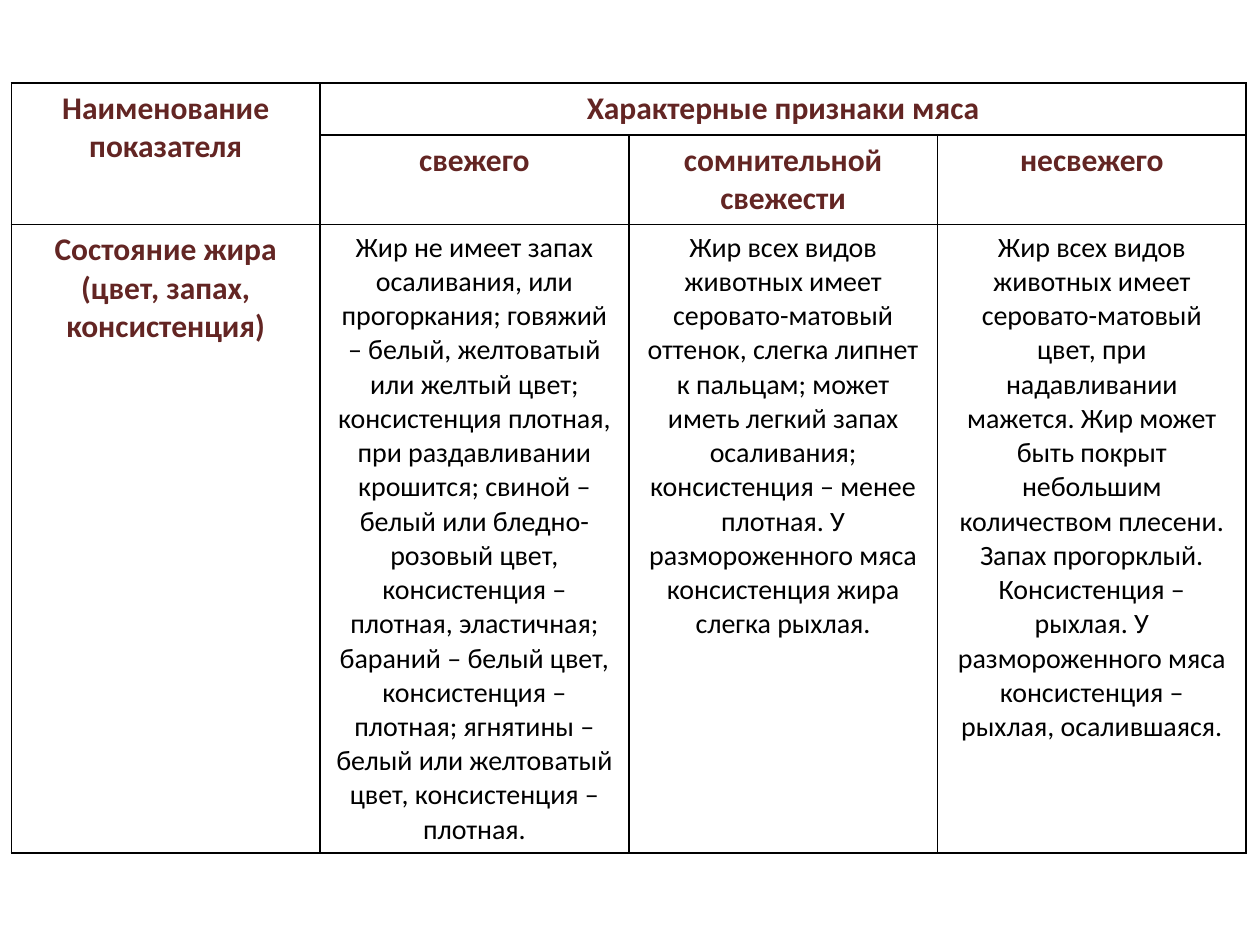
"""Builds a slide with a table comparing the fat of fresh, doubtful and spoiled meat."""
import pptx
import pptx.dml.color
import pptx.enum.text
import pptx.oxml
import pptx.oxml.ns
import pptx.util
from pptx.util import Inches

MAROON = pptx.dml.color.RGBColor(0x63, 0x25, 0x23)
BLACK = pptx.dml.color.RGBColor(0, 0, 0)
WHITE = pptx.dml.color.RGBColor(0xFF, 0xFF, 0xFF)

ROW_HEIGHTS = [0.41, 0.71, 4.99]
COLUMN_WIDTHS = [2.45] * 4
MERGES = [((0, 0), (1, 0)), ((0, 1), (0, 3))]
MEAT_SIGNS = [
    ["Наименование показателя", "Характерные признаки мяса", "", ""],
    ["", "свежего", "сомнительной свежести", "несвежего"],
    [
        "Состояние жира (цвет, запах, консистенция)",
        "Жир не имеет запах осаливания, или прогоркания; говяжий – белый, "
        "желтоватый или желтый цвет; консистенция плотная, при раздавливании "
        "крошится; свиной – белый или бледно-розовый цвет, консистенция – "
        "плотная, эластичная; бараний – белый цвет, консистенция – плотная; "
        "ягнятины – белый или желтоватый цвет, консистенция – плотная.",
        "Жир всех видов животных имеет серовато-матовый оттенок, слегка липнет "
        "к пальцам; может иметь легкий запах осаливания; консистенция – менее "
        "плотная. У размороженного мяса консистенция жира слегка рыхлая.",
        "Жир всех видов животных имеет серовато-матовый цвет, при надавливании "
        "мажется. Жир может быть покрыт небольшим количеством плесени. Запах "
        "прогорклый. Консистенция – рыхлая. У размороженного мяса "
        "консистенция – рыхлая, осалившаяся.",
    ],
]


class SlideBuilder:
    """Holds the text style and the current slide."""

    font_name = "Calibri"
    heading_size = 18
    body_size = 16
    border_width = 1

    def __init__(self, slide):
        self.slide = slide

    def add_table(self, left, top, texts, widths, heights, merges):
        """Add a bordered table with merged headings."""
        table = self.slide.shapes.add_table(
            len(heights), len(widths), Inches(left), Inches(top),
            Inches(sum(widths)), Inches(sum(heights))).table
        table.first_row = table.horz_banding = False
        for column, width in zip(table.columns, widths):
            column.width = Inches(width)
        for row, height in zip(table.rows, heights):
            row.height = Inches(height)
        for start, end in merges:
            table.cell(*start).merge(table.cell(*end))
        for r, row_texts in enumerate(texts):
            for c, text in enumerate(row_texts):
                self.format_cell(table.cell(r, c), text, r < 2 or c == 0)

    def format_cell(self, cell, text, is_heading):
        """Write one cell in the heading or body style."""
        self.add_borders(cell)
        cell.fill.solid()
        cell.fill.fore_color.rgb = WHITE
        if not text:
            return
        cell.text = text
        paragraph = cell.text_frame.paragraphs[0]
        paragraph.alignment = pptx.enum.text.PP_ALIGN.CENTER
        font = paragraph.font
        font.name = self.font_name
        font.size = pptx.util.Pt(self.heading_size if is_heading else self.body_size)
        font.bold = is_heading
        font.color.rgb = MAROON if is_heading else BLACK

    def add_borders(self, cell):
        """Draw a solid line on each side of a cell."""
        properties = cell._tc.get_or_add_tcPr()
        for side in ("lnL", "lnR", "lnT", "lnB"):
            properties.append(pptx.oxml.parse_xml(
                f'<a:{side} {pptx.oxml.ns.nsdecls("a")} '
                f'w="{pptx.util.Pt(self.border_width)}">'
                f'<a:solidFill><a:srgbClr val="{BLACK}"/></a:solidFill></a:{side}>'))


def main():
    """Build and save the slide."""
    presentation = pptx.Presentation()
    presentation.slide_width = Inches(10)
    presentation.slide_height = Inches(7.5)
    builder = SlideBuilder(
        presentation.slides.add_slide(presentation.slide_layouts[6]))
    builder.add_table(0.09, 0.66, MEAT_SIGNS, COLUMN_WIDTHS, ROW_HEIGHTS, MERGES)
    presentation.save("out.pptx")


if __name__ == "__main__":
    main()
